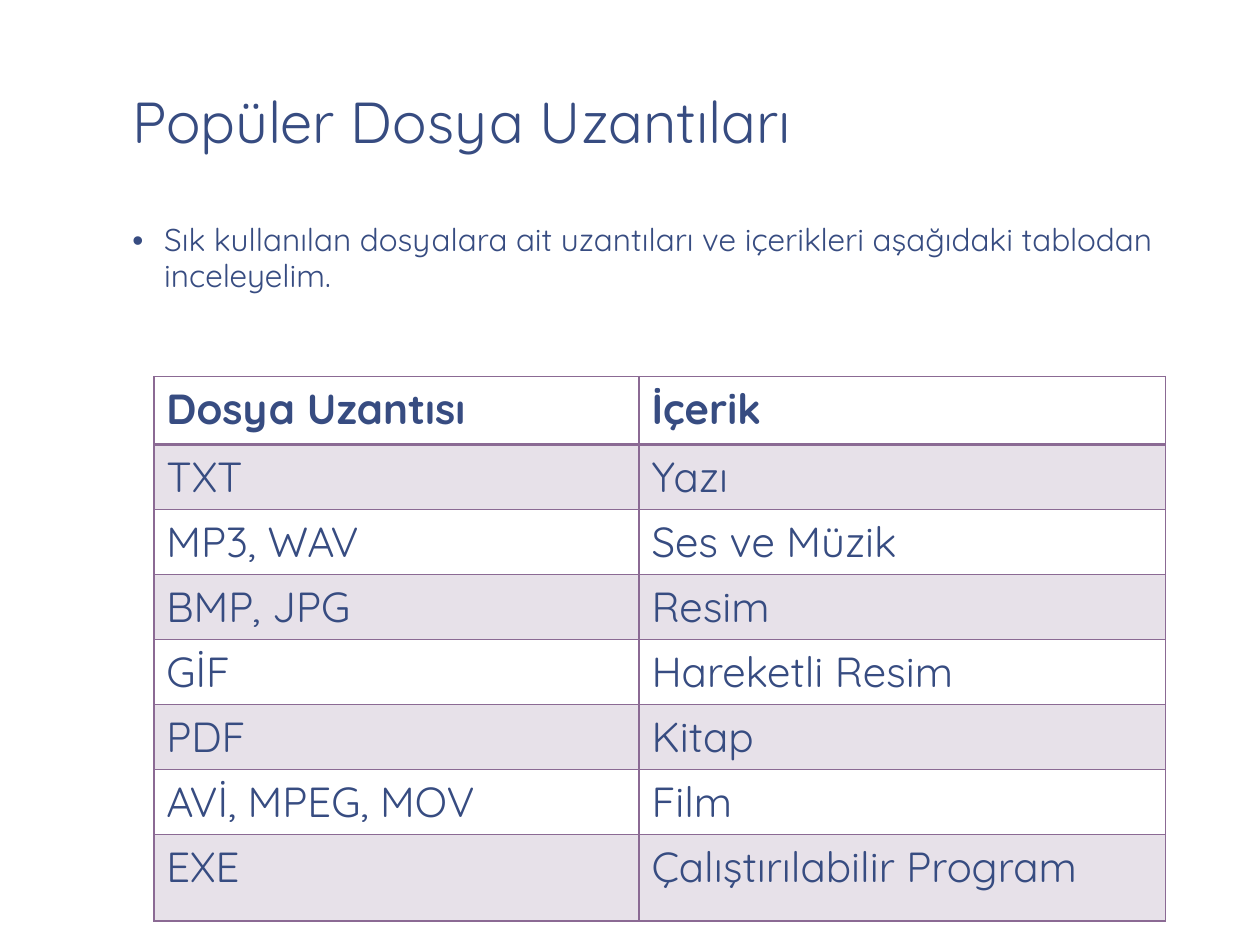
from lxml.etree import SubElement
from pptx import Presentation
from pptx.dml.color import RGBColor
from pptx.enum.text import MSO_ANCHOR
from pptx.oxml.ns import qn
from pptx.util import Cm, Pt

INK, PLUM = "374C81", "8B6A94"


def color(value):
    return RGBColor.from_string(value)


def write(frame, text, size, bold=False):
    para = frame.paragraphs[0]
    span = para.add_run()
    span.text = text
    span.font.color.rgb = color(INK)
    formats = {"name": "Quicksand", "size": Pt(size), "bold": bold}
    for name, value in formats.items():
        setattr(span.font, name, value)
    return para


deck = Presentation()
deck.slide_width, deck.slide_height = Cm(25.4), Cm(19.05)
page = deck.slides.add_slide(deck.slide_layouts[6])
page.background.fill.solid()
page.background.fill.fore_color.rgb = color("FFFFFF")

# Title and introduction
texts = [
    ("Popüler Dosya Uzantıları", 33, 0.85, MSO_ANCHOR.BOTTOM,
     (2.34, 0.2, 21.16, 3.12)),
    ("Sık kullanılan dosyalara ait uzantıları ve içerikleri aşağıdaki "
     "tablodan inceleyelim.", 18, 0.95, MSO_ANCHOR.TOP,
     (2.34, 4.32, 22.38, 2.59)),
]
for text, size, spacing, anchor, place in texts:
    box = page.shapes.add_textbox(*[Cm(length) for length in place])
    formats = {
        "word_wrap": True, "vertical_anchor": anchor,
        "margin_left": Cm(0.33), "margin_right": Cm(0.33),
        "margin_top": Cm(0.18), "margin_bottom": Cm(0.18),
    }
    for name, value in formats.items():
        setattr(box.text_frame, name, value)
    para = write(box.text_frame, text, size)
    para.line_spacing = spacing

# Bullet on the introduction, the last paragraph written
properties = para._p.get_or_add_pPr()
properties.set("marL", str(Cm(0.64)))
properties.set("indent", str(-Cm(0.64)))
SubElement(properties, qn("a:buFont"), typeface="Arial")
SubElement(properties, qn("a:buChar"), char="•")

# Table of file extensions
rows = [
    ("Dosya Uzantısı", "İçerik"),
    ("TXT", "Yazı"),
    ("MP3, WAV", "Ses ve Müzik"),
    ("BMP, JPG", "Resim"),
    ("GİF", "Hareketli Resim"),
    ("PDF", "Kitap"),
    ("AVİ, MPEG, MOV", "Film"),
    ("EXE", "Çalıştırılabilir Program"),
]
widths = [9.78, 10.62]
heights = [1.37] + [1.31] * 6 + [1.75]
table = page.shapes.add_table(
    len(rows), len(widths), Cm(3.1), Cm(7.59),
    Cm(sum(widths)), Cm(sum(heights))).table
table.first_row = table.horz_banding = False
for column, width in zip(table.columns, widths):
    column.width = Cm(width)
for row, height in zip(table.rows, heights):
    row.height = Cm(height)

for number, row in enumerate(rows):
    for column, text in enumerate(row):
        cell = table.cell(number, column)
        write(cell.text_frame, text, 24, bold=number == 0)

        # Borders, with a thicker rule under the header
        cell_properties = cell._tc.get_or_add_tcPr()
        for side in "LRTB":
            under_header = (number, side) in [(0, "B"), (1, "T")]
            border = SubElement(cell_properties, qn(f"a:ln{side}"),
                                w=str(Pt(2 if under_header else 1)))
            SubElement(SubElement(border, qn("a:solidFill")),
                       qn("a:srgbClr"), val=PLUM)

        # Pale tint on every second row
        if number % 2:
            cell.fill.solid()
            cell.fill.fore_color.rgb = color(PLUM)
            tint = cell_properties.find(qn("a:solidFill")).find(qn("a:srgbClr"))
            SubElement(tint, qn("a:alpha"), val="20000")
        else:
            cell.fill.background()

deck.save("out.pptx")
